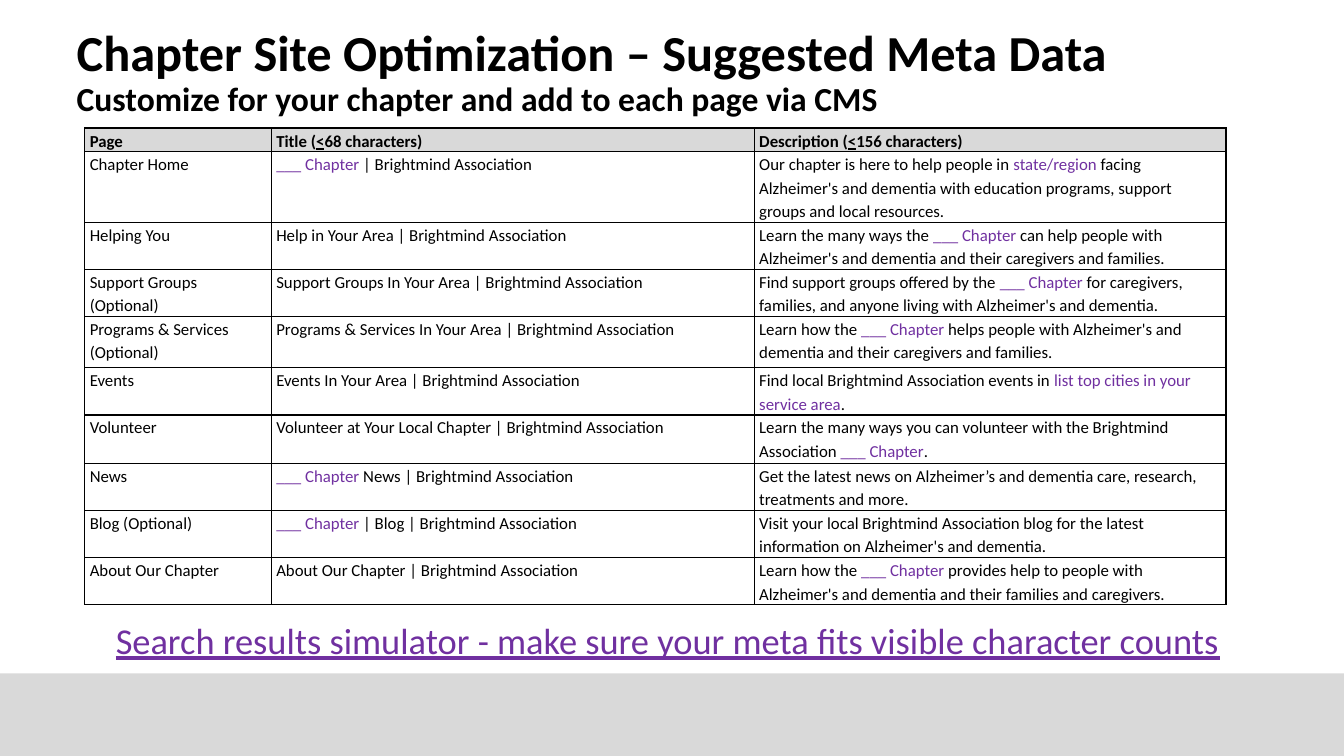
from dataclasses import dataclass

from lxml.etree import SubElement
from pptx import Presentation
from pptx.dml.color import RGBColor
from pptx.enum.shapes import MSO_SHAPE
from pptx.enum.text import MSO_ANCHOR, PP_ALIGN
from pptx.oxml.ns import qn
from pptx.slide import Slide
from pptx.table import _Cell
from pptx.util import Inches, Pt

BLACK = RGBColor(0x00, 0x00, 0x00)
PURPLE = RGBColor(0x70, 0x30, 0xA0)
GRAY = RGBColor(0xD9, 0xD9, 0xD9)
FONT = "Calibri"
ORG = "Brightmind Association"
COLUMN_WIDTHS = (1.85, 4.79, 4.68)
ROW_HEIGHTS = (0.22, 0.65, 0.43, 0.43, 0.51, 0.43, 0.48, 0.43, 0.43, 0.43)


@dataclass(frozen=True)
class Span:
    text: str
    color: RGBColor = BLACK
    underline: bool = False


@dataclass(frozen=True)
class PageMeta:
    page: tuple[Span, ...]
    title: tuple[Span, ...]
    description: tuple[Span, ...]


def spans(*parts: str | Span) -> tuple[Span, ...]:
    return tuple(Span(part) if isinstance(part, str) else part for part in parts)


CHAPTER = Span("___ Chapter", PURPLE)
AT_MOST = Span("<", underline=True)

HEADER = PageMeta(
    spans("Page"),
    spans("Title (", AT_MOST, "68 characters)"),
    spans("Description (", AT_MOST, "156 characters)"),
)
PAGES = (
    PageMeta(
        spans("Chapter Home"),
        spans(CHAPTER, f" | {ORG}"),
        spans("Our chapter is here to help people in ", Span("state/region ", PURPLE),
              "facing Alzheimer's and dementia with education programs, "
              "support groups and local resources."),
    ),
    PageMeta(
        spans("Helping You"),
        spans(f"Help in Your Area | {ORG}"),
        spans("Learn the many ways the ", CHAPTER,
              " can help people with Alzheimer's and dementia "
              "and their caregivers and families."),
    ),
    PageMeta(
        spans("Support Groups (Optional)"),
        spans(f"Support Groups In Your Area | {ORG}"),
        spans("Find support groups offered by the ", CHAPTER,
              " for caregivers, families, and anyone living with "
              "Alzheimer's and dementia."),
    ),
    PageMeta(
        spans("Programs & Services (Optional)"),
        spans(f"Programs & Services In Your Area | {ORG}"),
        spans("Learn how the ", CHAPTER,
              " helps people with Alzheimer's and dementia "
              "and their caregivers and families."),
    ),
    PageMeta(
        spans("Events"),
        spans(f"Events In Your Area | {ORG}"),
        spans(f"Find local {ORG} events in ",
              Span("list top cities in your service area", PURPLE), "."),
    ),
    PageMeta(
        spans("Volunteer"),
        spans(f"Volunteer at Your Local Chapter | {ORG}"),
        spans(f"Learn the many ways you can volunteer with the {ORG} ", CHAPTER, "."),
    ),
    PageMeta(
        spans("News"),
        spans(CHAPTER, f" News | {ORG}"),
        spans("Get the latest news on Alzheimer’s and dementia care, "
              "research, treatments and more."),
    ),
    PageMeta(
        spans("Blog (Optional)"),
        spans(CHAPTER, f" | Blog | {ORG}"),
        spans(f"Visit your local {ORG} blog for the latest "
              "information on Alzheimer's and dementia."),
    ),
    PageMeta(
        spans("About Our Chapter"),
        spans(f"About Our Chapter | {ORG}"),
        spans("Learn how the ", CHAPTER,
              " provides help to people with Alzheimer's and dementia "
              "and their families and caregivers."),
    ),
)


def add_span(p, span: Span, size: float, bold: bool = False) -> None:
    r = p.add_run()
    r.text = span.text
    r.font.name = FONT
    r.font.size = Pt(size)
    r.font.bold = bold
    r.font.underline = span.underline
    r.font.color.rgb = span.color


def add_footer_band(s: Slide) -> None:
    sp = s.shapes.add_shape(MSO_SHAPE.RECTANGLE, Inches(0), Inches(6.68),
                            Inches(13.33), Inches(0.82))
    sp.shadow.inherit = False
    sp.fill.solid()
    sp.fill.fore_color.rgb = GRAY
    sp.line.fill.background()


def set_title(s: Slide) -> None:
    sp = s.shapes.title
    sp.left, sp.top = Inches(0.66), Inches(0)
    sp.width, sp.height = Inches(12.14), Inches(1.45)
    tf = sp.text_frame
    tf.vertical_anchor = MSO_ANCHOR.MIDDLE
    p = tf.paragraphs[0]
    p.alignment = PP_ALIGN.LEFT
    p.line_spacing = 0.9
    add_span(p, Span("Chapter Site Optimization – Suggested Meta Data"), 36, True)
    p.add_line_break()
    add_span(p, Span("Customize for your chapter and add to each page via CMS"), 24, True)


def add_borders(cell: _Cell) -> None:
    tc_pr = cell._tc.get_or_add_tcPr()
    for side in ("L", "R", "T", "B"):
        line = SubElement(tc_pr, qn(f"a:ln{side}"), w=str(Pt(1)))
        fill = SubElement(line, qn("a:solidFill"))
        SubElement(fill, qn("a:srgbClr"), val=str(BLACK))


def fill_cell(cell: _Cell, content: tuple[Span, ...], is_header: bool) -> None:
    add_borders(cell)
    if is_header:
        cell.fill.solid()
        cell.fill.fore_color.rgb = GRAY
    else:
        cell.fill.background()
    cell.margin_left = cell.margin_right = Inches(0.05)
    cell.margin_top = cell.margin_bottom = Inches(0)
    p = cell.text_frame.paragraphs[0]
    p.line_spacing = 1.15
    for span in content:
        add_span(p, span, 12, is_header)


def add_meta_table(s: Slide) -> None:
    table = s.shapes.add_table(len(ROW_HEIGHTS), len(COLUMN_WIDTHS), Inches(0.84),
                               Inches(1.27), Inches(sum(COLUMN_WIDTHS)),
                               Inches(sum(ROW_HEIGHTS))).table
    table.horz_banding = False
    for column, width in zip(table.columns, COLUMN_WIDTHS):
        column.width = Inches(width)
    for i, (meta, height) in enumerate(zip((HEADER, *PAGES), ROW_HEIGHTS)):
        table.rows[i].height = Inches(height)
        for j, content in enumerate((meta.page, meta.title, meta.description)):
            fill_cell(table.cell(i, j), content, i == 0)


def add_simulator_line(s: Slide) -> None:
    tf = s.shapes.add_textbox(Inches(1.05), Inches(6.08),
                              Inches(11.37), Inches(0.54)).text_frame
    tf.word_wrap = True
    add_span(tf.paragraphs[0],
             Span("Search results simulator - make sure your meta fits "
                  "visible character counts", PURPLE, True), 26)


def main() -> None:
    prs = Presentation()
    prs.slide_width, prs.slide_height = Inches(13.33), Inches(7.5)
    s = prs.slides.add_slide(prs.slide_layouts[5])
    add_footer_band(s)
    set_title(s)
    add_meta_table(s)
    add_simulator_line(s)
    prs.save("out.pptx")


if __name__ == "__main__":
    main()
